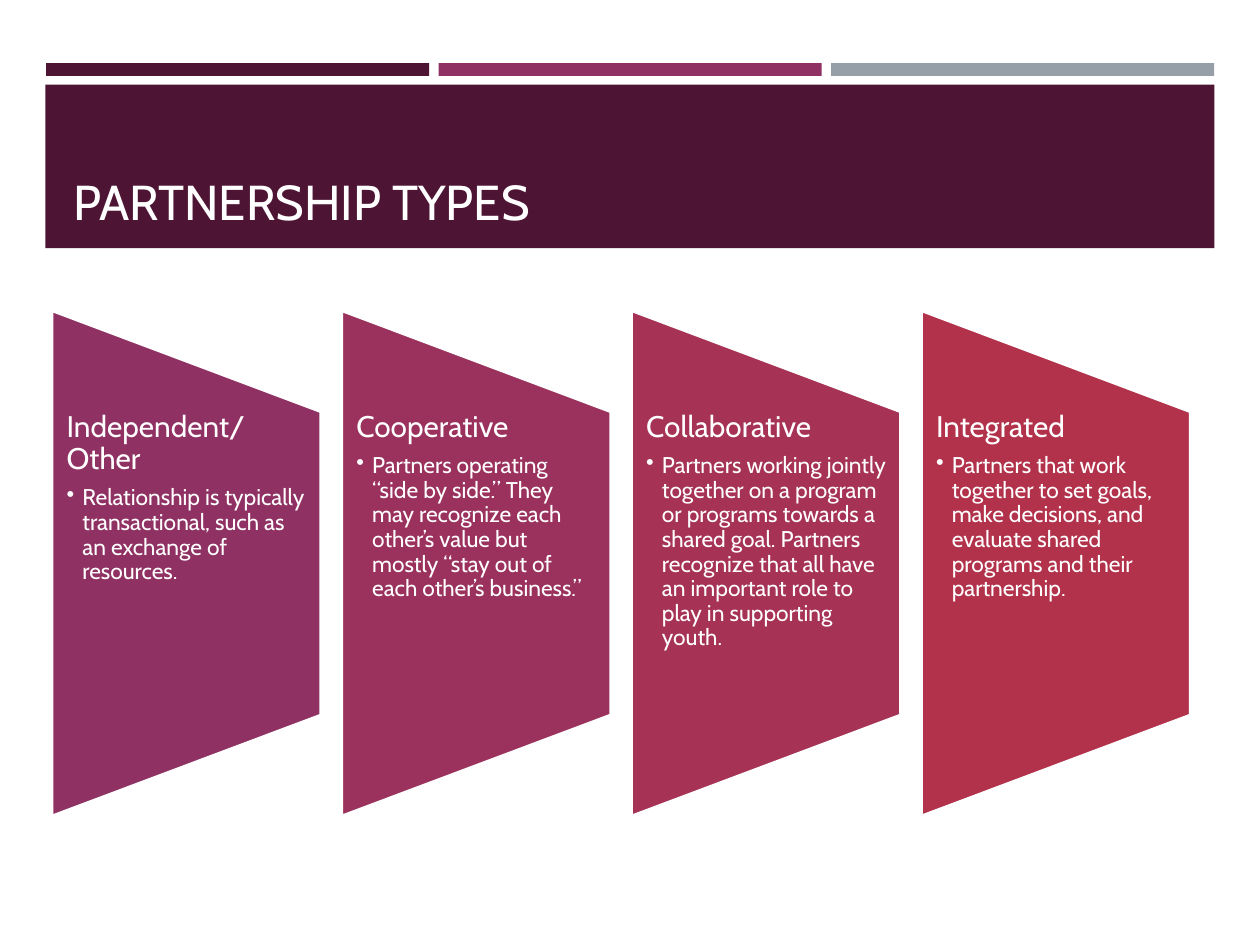
from lxml import etree
from pptx import Presentation
from pptx.dml.color import RGBColor
from pptx.enum import shapes, text
from pptx.oxml import ns
from pptx.util import Pt

FONT = "Cabin"
COLORS = {
    "white": "FFFFFF",
    "plum": "4D1434",
    "magenta": "903163",
    "gray": "969FA7",
    "berry": "9B325D",
    "rose": "A63256",
    "red": "B2324B",
}
STRIPES = ["plum", "magenta", "gray"]
PARTNERSHIPS = [
    ("magenta", "Independent/Other",
     "Relationship is typically transactional, such as an exchange of resources."),
    ("berry", "Cooperative",
     "Partners operating “side by side.” They may recognize each other’s value "
     "but mostly “stay out of each other’s business.”"),
    ("rose", "Collaborative",
     "Partners working jointly together on a program or programs towards a shared goal. "
     "Partners recognize that all have an important role to play in supporting youth."),
    ("red", "Integrated",
     "Partners that work together to set goals, make decisions, and evaluate shared "
     "programs and their partnership."),
]
PANEL_W, PANEL_H = 154.1, 289.4
PANEL_LEFT, PANEL_MIDDLE, PANEL_PITCH = 29.5, 321.9, 165.6


def rgb(name):
    return RGBColor.from_string(COLORS[name])


def add_block(s, kind, x, y, w, h, color):
    sp = s.shapes.add_shape(kind, Pt(x), Pt(y), Pt(w), Pt(h))
    sp.shadow.inherit = False
    sp.fill.solid()
    sp.fill.fore_color.rgb = rgb(color)
    sp.line.fill.background()
    return sp


def add_text_frame(s, x, y, w, h, margin_x, margin_y):
    tf = s.shapes.add_textbox(Pt(x), Pt(y), Pt(w), Pt(h)).text_frame
    tf.word_wrap = True
    tf.margin_left = tf.margin_right = Pt(margin_x)
    tf.margin_top = tf.margin_bottom = Pt(margin_y)
    return tf


def write(p, words, size):
    p.text = words
    p.font.name = FONT
    p.font.size = Pt(size)
    p.font.color.rgb = rgb("white")


def add_bullet(p, indent):
    pPr = p._p.get_or_add_pPr()
    pPr.set("marL", str(Pt(indent)))
    pPr.set("indent", str(-Pt(indent)))
    bullet = etree.Element(ns.qn("a:buChar"), char="•")
    pPr.insert_element_before(bullet, "a:tabLst", "a:defRPr", "a:extLst")


def add_header(s):
    for i, color in enumerate(STRIPES):
        add_block(s, shapes.MSO_SHAPE.RECTANGLE, 26.4 + i * 224.3, 36, 218.9, 7.4, color)
    add_block(s, shapes.MSO_SHAPE.RECTANGLE, 26, 48.4, 668, 93.4, "plum")
    tf = add_text_frame(s, 34.8, 55.4, 651.6, 79.9, 7.2, 3.6)
    tf.vertical_anchor = text.MSO_ANCHOR.BOTTOM
    write(tf.paragraphs[0], "PARTNERSHIP TYPES", 28)


def add_panel(s, x, color, heading, description):
    """Add a tapered panel, a trapezoid turned on its side, with its text."""
    sp = add_block(s, shapes.MSO_SHAPE.FLOWCHART_MANUAL_OPERATION,
                   x + (PANEL_W - PANEL_H) / 2, PANEL_MIDDLE - PANEL_W / 2,
                   PANEL_H, PANEL_W, color)
    sp.rotation = 270
    sp.line.color.rgb = rgb("white")
    sp.line.width = Pt(2)

    tf = add_text_frame(s, x, PANEL_MIDDLE - PANEL_H * 0.3, PANEL_W, PANEL_H * 0.6, 8.6, 0)
    head, body = tf.paragraphs[0], tf.add_paragraph()
    write(head, heading, 17)
    write(body, description, 13)
    body.level = 1
    head.line_spacing = body.line_spacing = 0.9
    head.space_after = Pt(6)
    body.space_after = Pt(2)
    add_bullet(body, 9)


def main():
    prs = Presentation()
    prs.slide_width, prs.slide_height = Pt(720), Pt(540)
    s = prs.slides.add_slide(prs.slide_layouts[6])
    add_header(s)
    for i, partnership in enumerate(PARTNERSHIPS):
        add_panel(s, PANEL_LEFT + i * PANEL_PITCH, *partnership)
    prs.save("out.pptx")


if __name__ == "__main__":
    main()
